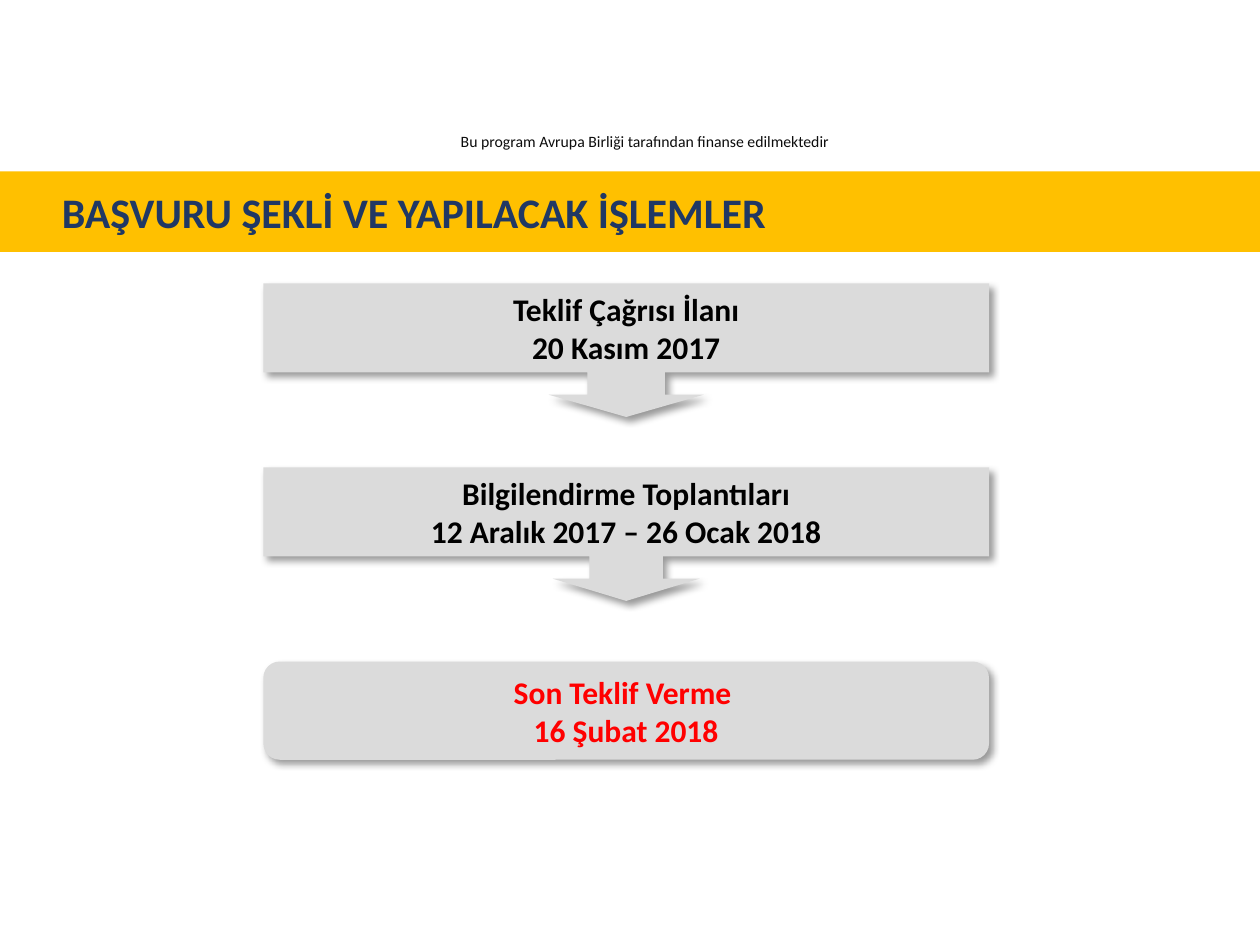
from lxml import etree
from pptx import Presentation
from pptx import util as u
from pptx.dml.color import RGBColor
from pptx.enum import shapes, text
from pptx.oxml import ns

COLORS = {"band": "FFC000", "title": "203864", "box": "DBDBDB",
          "dark": "000000", "note": "0D0D0D", "alert": "FF0000"}
LEFT, WIDTH = 2.09, 5.76
KIND = shapes.MSO_SHAPE


def place(shape, left, top, width, height):
    shape.left, shape.top = u.Inches(left), u.Inches(top)
    shape.width, shape.height = u.Inches(width), u.Inches(height)


def paint(shape, color):
    shape.fill.solid()
    shape.fill.fore_color.rgb = RGBColor.from_string(COLORS[color])
    shape.line.fill.background()


def write(frame, lines, size, color, bold=True, align=text.PP_ALIGN.CENTER):
    frame.word_wrap = True
    frame.text = "\n".join(lines)
    for para in frame.paragraphs:
        para.alignment = align
        for run in para.runs:
            font = run.font
            font.name, font.size, font.bold = "Calibri", u.Pt(size), bold
            font.color.rgb = RGBColor.from_string(COLORS[color])


def shade(shape):
    """Give the shape a soft shadow to the lower right."""
    shape.shadow.inherit = False
    effects = shape._element.spPr.find(ns.qn("a:effectLst"))
    outer = etree.SubElement(effects, ns.qn("a:outerShdw"), blurRad=str(u.Pt(4)),
                             dist=str(u.Pt(3)), dir=str(45 * 60000),
                             algn="tl", rotWithShape="0")
    tint = etree.SubElement(outer, ns.qn("a:srgbClr"), val=COLORS["dark"])
    etree.SubElement(tint, ns.qn("a:alpha"), val="40000")


def add_note(slide, words):
    box = slide.shapes.add_textbox(0, 0, 0, 0)
    place(box, 2.79, 1, 4.68, 0.25)
    write(box.text_frame, [words], 9, "note", bold=False)


def add_title(slide, words):
    title = slide.shapes.title
    place(title, 0, 1.36, 10, 0.64)
    paint(title, "band")
    frame = title.text_frame
    write(frame, [words], 24, "title", align=text.PP_ALIGN.LEFT)
    frame.auto_size = text.MSO_AUTO_SIZE.NONE
    frame.vertical_anchor = text.MSO_ANCHOR.TOP
    frame.margin_top = frame.margin_bottom = u.Inches(0.12)
    props = frame.paragraphs[0]._p.get_or_add_pPr()
    props.set("marL", str(u.Inches(0.4)))
    props.set("indent", str(u.Inches(-0.01)))


def add_step(slide, kind, top, height, adjust, lines, color="dark"):
    step = slide.shapes.add_shape(kind, 0, 0, 0, 0)
    place(step, LEFT, top, WIDTH, height)
    for i, value in enumerate(adjust):
        step.adjustments[i] = value
    paint(step, "box")
    shade(step)
    step.text_frame.vertical_anchor = text.MSO_ANCHOR.MIDDLE
    write(step.text_frame, lines, 18, color)


def main():
    deck = Presentation()
    deck.slide_width, deck.slide_height = u.Inches(10), u.Inches(7.5)
    slide = deck.slides.add_slide(deck.slide_layouts[5])

    # Heading
    add_note(slide, "Bu program Avrupa Birliği tarafından finanse edilmektedir ")
    add_title(slide, "BAŞVURU ŞEKLİ VE YAPILACAK İŞLEMLER")

    # Steps that lead on to the next one
    steps = [(2.25, 0.58, ["Teklif Çağrısı İlanı", "20 Kasım 2017"]),
             (3.71, 0.55, ["Bilgilendirme Toplantıları",
                           "12 Aralık 2017 – 26 Ocak 2018"])]
    for top, shaft, lines in steps:
        add_step(slide, KIND.DOWN_ARROW_CALLOUT, top, 1.06,
                 [shaft, shaft, 1 / 6, 2 / 3], lines)

    # Deadline
    add_step(slide, KIND.ROUNDED_RECTANGLE, 5.25, 0.78, [1 / 6],
             ["Son Teklif Verme ", "16 Şubat 2018"], "alert")

    deck.save("out.pptx")


if __name__ == "__main__":
    main()
